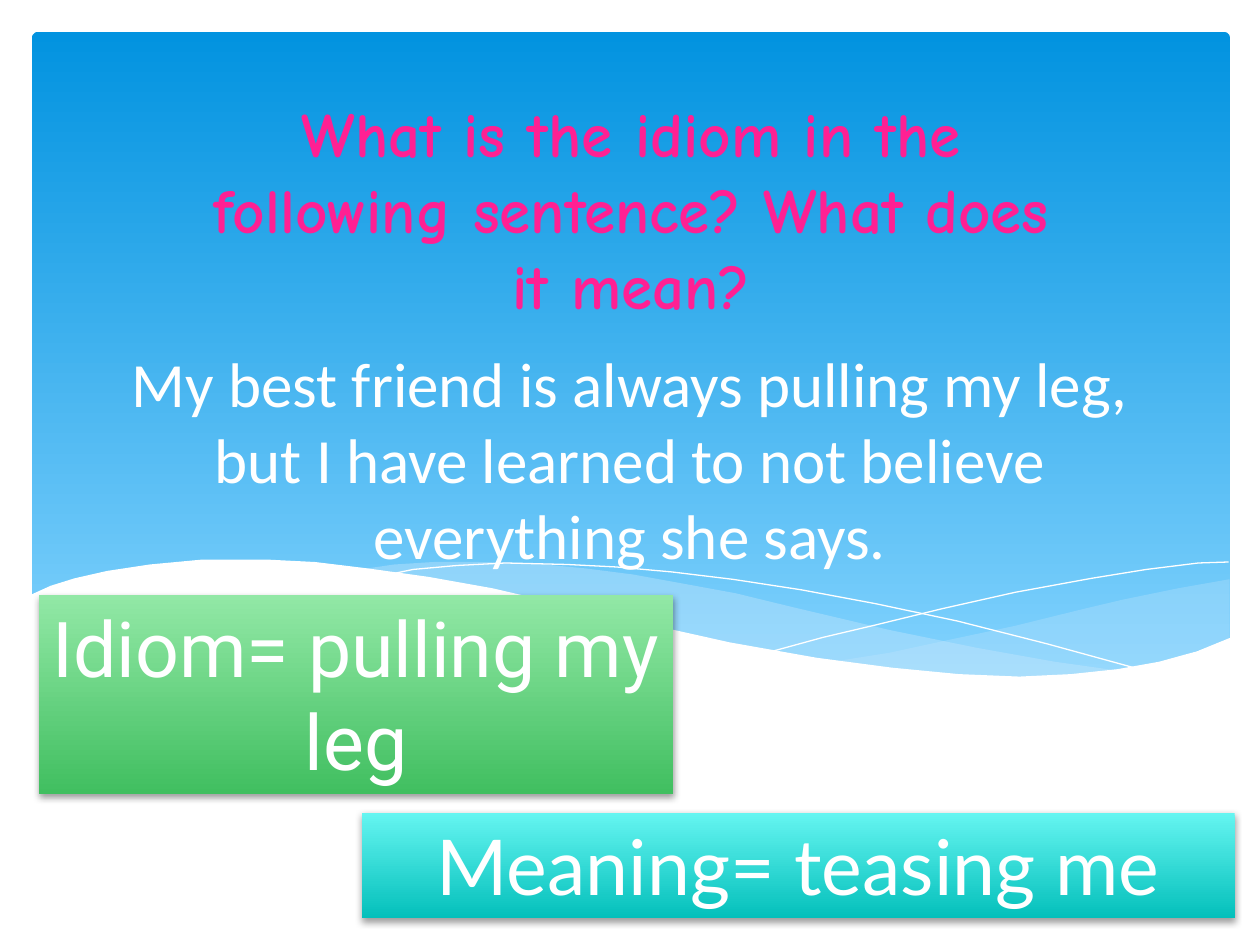
from lxml.etree import SubElement
from pptx import Presentation
from pptx.dml.color import RGBColor
from pptx.enum.shapes import MSO_SHAPE as Shape
from pptx.enum.text import MSO_ANCHOR as Anchor, PP_ALIGN as Align
from pptx.oxml.ns import qn
from pptx.util import Cm, Pt

RIGHT_WAVE = [
    (2477, 1168), (2375, 1186), (2263, 1209), (2187, 1227), (2045, 1262), (1913, 1290),
    (1793, 1316), (1679, 1334), (1755, 1346), (1859, 1356), (1953, 1364), (2068, 1367),
    (2169, 1361), (2258, 1351), (2339, 1336), (2410, 1313), (2479, 1288), (2479, 1168),
]
MIDDLE_WAVE = [
    (2268, 1354), (2126, 1334), (1969, 1306), (1793, 1270), (1598, 1224), (1483, 1196),
    (1374, 1176), (1275, 1158), (1181, 1146), (1067, 1135), (965, 1133), (874, 1133),
    (795, 1138), (726, 1148), (820, 1158), (919, 1176), (1026, 1196), (1140, 1224),
    (1346, 1273), (1483, 1300), (1610, 1323), (1727, 1341), (1834, 1356), (1933, 1364),
    (2050, 1369), (2154, 1367),
]
FALLING_LINE = [
    (785, 1158), (833, 1148), (922, 1140), (1019, 1135), (1143, 1138), (1242, 1143),
    (1354, 1153), (1478, 1168), (1615, 1189), (1765, 1217), (1930, 1252), (2111, 1298),
    (2304, 1351),
]
RISING_LINE = [
    (1557, 1313), (1659, 1285), (1765, 1260), (1900, 1227), (2047, 1194), (2200, 1166),
    (2311, 1148), (2416, 1135), (2477, 1133),
]
WHITE_WAVE = [
    (2482, 1285), (2413, 1313), (2337, 1334), (2253, 1349), (2159, 1359), (2055, 1364),
    (1933, 1359), (1798, 1346), (1646, 1326), (1471, 1295), (1278, 1252), (1135, 1219),
    (993, 1186), (864, 1163), (742, 1146), (635, 1133), (536, 1128), (409, 1128),
    (302, 1138), (216, 1151), (150, 1166), (102, 1181), (58, 1201), (58, 1496), (2482, 1496),
]


def color(hex_string):
    """Turn a hex string into a colour."""
    return RGBColor.from_string(hex_string)


def add_gradient_box(page, kind, position, top_color, bottom_color):
    """Add a borderless shape shaded from top to bottom."""
    box = page.shapes.add_shape(kind, *map(Cm, position))
    box.shadow.inherit = False
    box.line.fill.background()
    box.fill.gradient()
    box.fill.gradient_angle = 270
    for stop, shade in zip(box.fill.gradient_stops, (top_color, bottom_color)):
        stop.color.rgb = color(shade)
    return box


def add_soft_shadow(box):
    """Give a shape a soft shadow below it."""
    effects = box.element.spPr.find(qn("a:effectLst"))
    shadow = SubElement(effects, qn("a:outerShdw"), blurRad=str(Pt(4)),
                        dist=str(Pt(2)), dir="5400000", rotWithShape="0")
    shade = SubElement(shadow, qn("a:srgbClr"), val="000000")
    SubElement(shade, qn("a:alpha"), val="38000")


def add_outline(page, points, closed):
    """Draw a freeform through points given in hundredths of a centimetre."""
    builder = page.shapes.build_freeform(*points[0], scale=Cm(0.01))
    builder.add_line_segments(points[1:], close=closed)
    outline = builder.convert_to_shape()
    outline.shadow.inherit = False
    return outline


def add_wave(page, points, hex_string, opacity=100):
    """Add a filled wave with the given opacity in percent."""
    wave = add_outline(page, points, True)
    wave.line.fill.background()
    wave.fill.solid()
    wave.fill.fore_color.rgb = color(hex_string)
    if opacity < 100:
        shade = wave.element.spPr.find(qn("a:solidFill")).find(qn("a:srgbClr"))
        SubElement(shade, qn("a:alpha"), val=str(opacity * 1000))


def add_curve(page, points):
    """Add a white hairline curve."""
    curve = add_outline(page, points, False)
    curve.fill.background()
    curve.line.color.rgb = color("FFFFFF")
    curve.line.width = Pt(0)


def write(box, text, font, size, hex_string="FFFFFF", bold=False, anchor=Anchor.TOP):
    """Put one centred paragraph into a shape."""
    frame = box.text_frame
    frame.text = text
    frame.word_wrap = True
    frame.vertical_anchor = anchor
    para = frame.paragraphs[0]
    para.alignment = Align.CENTER
    span = para.runs[0].font
    span.name, span.size, span.bold = font, Pt(size), bold
    span.color.rgb = color(hex_string)


def add_text(page, position, *content, **style):
    """Add a text box with one centred paragraph."""
    write(page.shapes.add_textbox(*map(Cm, position)), *content, **style)


def add_answer(page, position, shades, text, font):
    """Add a shaded answer box with a shadow."""
    box = add_gradient_box(page, Shape.RECTANGLE, position, *shades)
    add_soft_shadow(box)
    write(box, text, font, 44)


def main():
    """Build the idiom slide."""
    deck = Presentation()
    deck.slide_width, deck.slide_height = Cm(25.4), Cm(19.05)
    page = deck.slides.add_slide(deck.slide_layouts[6])

    sky = add_gradient_box(page, Shape.ROUNDED_RECTANGLE, (0.64, 0.64, 24.16, 13.16),
                           "0293E0", "83D3FE")
    sky.adjustments[0] = 0.01
    add_wave(page, RIGHT_WAVE, "C6E7FC", 29)
    add_wave(page, MIDDLE_WAVE, "C6E7FC", 40)
    add_curve(page, FALLING_LINE)
    add_curve(page, RISING_LINE)
    add_wave(page, WHITE_WAVE, "FFFFFF")

    add_text(page, (1.9, 6.83, 21.6, 4.24),
             "My best friend is always pulling my leg, but I have learned to not "
             "believe everything she says.", "Calibri", 36)
    add_text(page, (3.81, 3.99, 17.83, 2.62),
             "What is the idiom in the following sentence? What does it mean?",
             "Comic Neue", 36, "FF2093", bold=True, anchor=Anchor.BOTTOM)
    add_answer(page, (7.29, 16.38, 17.6, 2.13), ("65F5F1", "04C0BB"),
               "Meaning= teasing me", "Lato")
    add_answer(page, (0.79, 11.99, 12.78, 4.01), ("92E8A6", "41BF60"),
               "Idiom= pulling my leg", "Roboto")
    deck.save("out.pptx")


if __name__ == "__main__":
    main()
